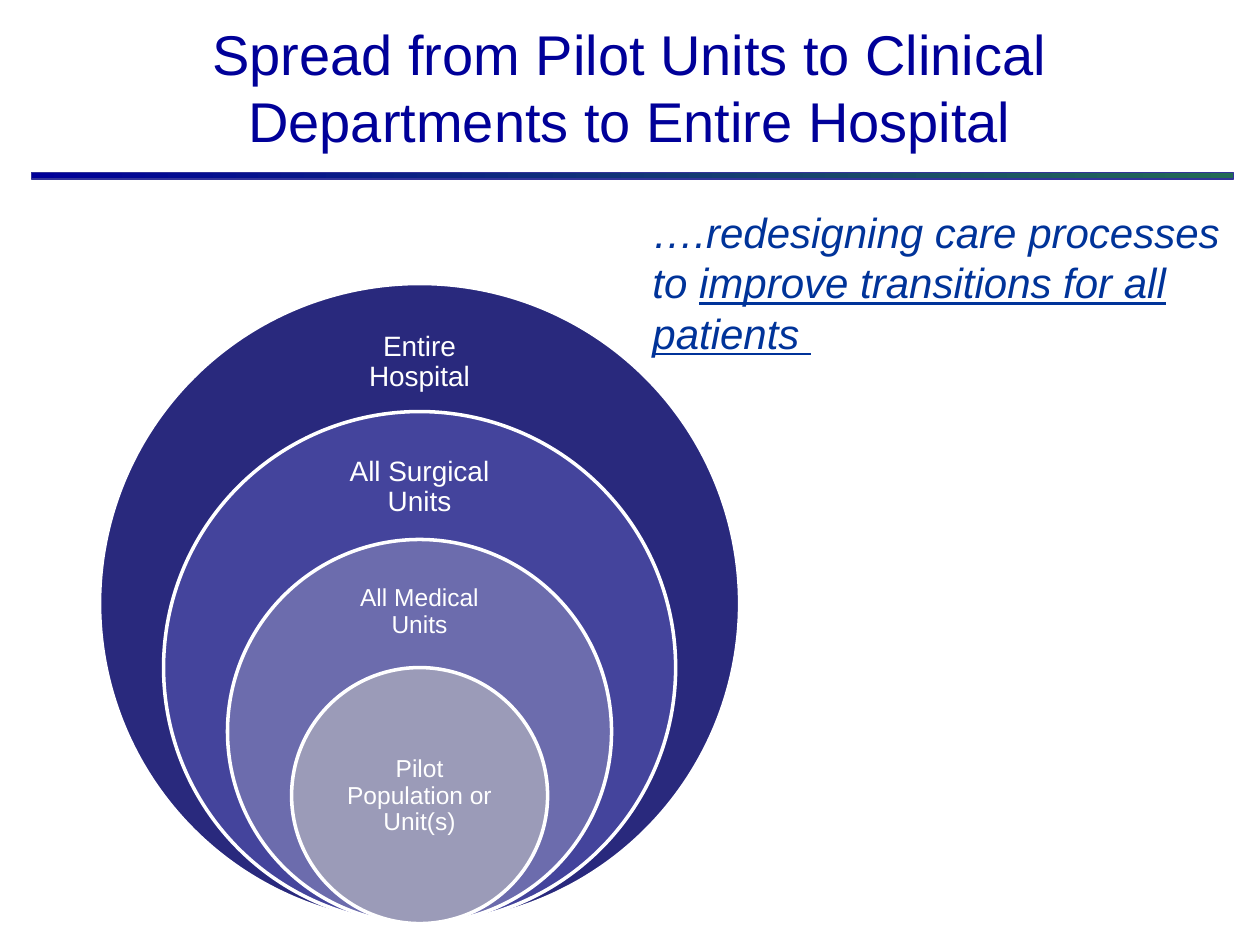
"""Build a slide of nested circles showing spread from pilot units to the entire hospital."""
from pptx import Presentation
from pptx.dml.color import RGBColor
from pptx.enum.shapes import MSO_SHAPE
from pptx.enum.text import MSO_ANCHOR, PP_ALIGN
from pptx.util import Inches, Pt

RECTANGLE, OVAL = MSO_SHAPE.RECTANGLE, MSO_SHAPE.OVAL
MIDDLE, CENTER = MSO_ANCHOR.MIDDLE, PP_ALIGN.CENTER
TITLE_ONLY = 5

WHITE = RGBColor(0xFF, 0xFF, 0xFF)
NAVY = RGBColor(0x00, 0x00, 0x99)
GREEN = RGBColor(0x22, 0x6A, 0x55)
INDIGO = RGBColor(0x33, 0x33, 0x99)
BLUE = RGBColor(0x00, 0x33, 0x99)
HOSPITAL = RGBColor(0x29, 0x29, 0x7D)
SURGICAL = RGBColor(0x44, 0x44, 0x9C)
MEDICAL = RGBColor(0x6C, 0x6C, 0xAD)
PILOT = RGBColor(0x9B, 0x9B, 0xB8)


def inches(*lengths):
    return [Inches(length) for length in lengths]


def add_run(paragraph, text, color, **formats):
    run = paragraph.add_run()
    run.text = text
    run.font.color.rgb = color
    for name, value in {"name": "Arial", **formats}.items():
        setattr(run.font, name, value)


deck = Presentation()
deck.slide_width, deck.slide_height = inches(10, 7.5)
slide = deck.slides.add_slide(deck.slide_layouts[TITLE_ONLY])

rule = slide.shapes.add_shape(RECTANGLE, *inches(0.25, 1.37, 9.54, 0.05))
rule.shadow.inherit = False
rule.fill.gradient()
rule.fill.gradient_angle = 0
for stop, color in zip(rule.fill.gradient_stops, (NAVY, GREEN)):
    stop.color.rgb = color
rule.line.color.rgb = INDIGO
rule.line.width = Pt(0.75)

heading = slide.shapes.title
heading.left, heading.top, heading.width, heading.height = inches(0.5, 0.13, 9, 1.12)
heading.text_frame.vertical_anchor = MIDDLE
heading.text_frame.paragraphs[0].alignment = CENTER
add_run(heading.text_frame.paragraphs[0],
        "Spread from Pilot Units to Clinical Departments to Entire Hospital",
        NAVY, size=Pt(32))

axis, base, outer_diameter, label_width = 3.33, 7.33, 5.08, 1.43
stages = [
    ("Entire Hospital", HOSPITAL, 16, 0.25, 0.76, 0.12),
    ("All Surgical Units", SURGICAL, 16, 0.24, 0.73, 0.12),
    ("All Medical Units", MEDICAL, 14, 0.23, 0.69, 0.11),
    ("Pilot Population or Unit(s)", PILOT, 14, 0.51, 1.02, 0.11),
]
for level, (stage, color, size, gap, height, inset) in enumerate(stages):
    diameter = outer_diameter * (1 - level / 5)
    top = base - diameter
    circle = slide.shapes.add_shape(
        OVAL, *inches(axis - diameter / 2, top, diameter, diameter))
    circle.shadow.inherit = False
    circle.fill.solid()
    circle.fill.fore_color.rgb = color
    circle.line.color.rgb = WHITE
    circle.line.width = Pt(2)

    label = slide.shapes.add_textbox(
        *inches(axis - label_width / 2, top + gap, label_width, height)).text_frame
    label.word_wrap = True
    label.vertical_anchor = MIDDLE
    for side in ("left", "top", "right", "bottom"):
        setattr(label, f"margin_{side}", Inches(inset))
    label.paragraphs[0].alignment = CENTER
    label.paragraphs[0].line_spacing = 0.9
    add_run(label.paragraphs[0], stage, WHITE, size=Pt(size))

goal = slide.shapes.add_textbox(*inches(5.08, 1.59, 4.75, 1.31)).text_frame
goal.word_wrap = True
for text, underline in (("….redesigning care processes to ", False),
                        ("improve transitions for all patients ", True)):
    add_run(goal.paragraphs[0], text, BLUE, size=Pt(24), italic=True, underline=underline)

deck.save("out.pptx")
